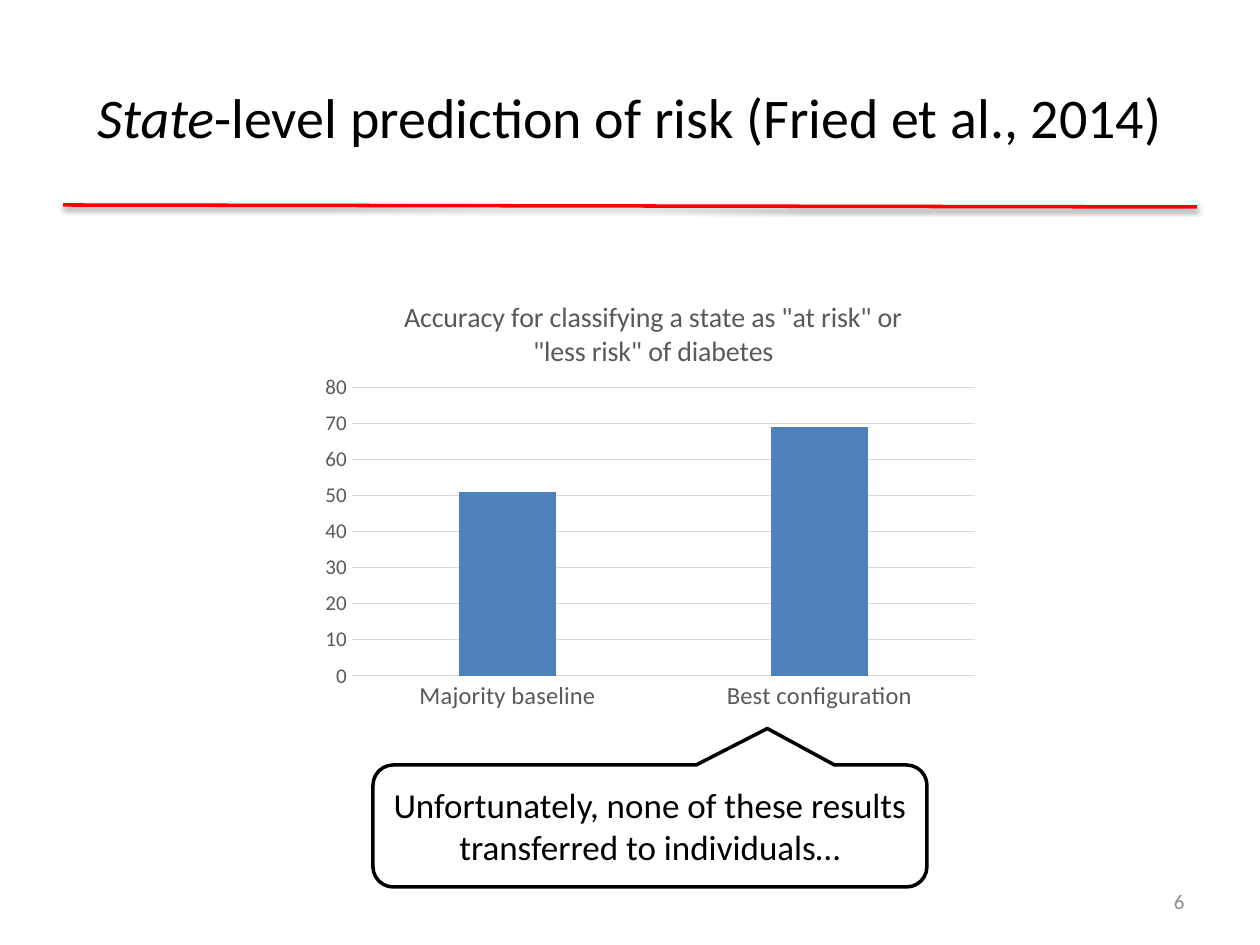
"""Build a slide comparing state-level accuracy of diabetes risk prediction."""
from dataclasses import dataclass

from lxml import etree
from pptx import Presentation
from pptx import util as u
from pptx.chart.data import CategoryChartData
from pptx.dml.color import RGBColor
from pptx.enum import chart as charts, shapes, text
from pptx.oxml import parse_xml
from pptx.oxml.ns import nsdecls, qn

TITLE = [("State", True), ("-level prediction of risk (Fried et al., 2014)", False)]
CHART_TITLE = 'Accuracy for classifying a state as "at risk" or "less risk" of diabetes'
ACCURACY = {"Majority baseline": 51, "Best configuration": 69}
REMARK = "Unfortunately, none of these results transferred to individuals…"
PAGE_NUMBER = "6"

PAGE_SIZE = (1260, 945)
RULE_ENDS = (63, 205, 1197, 207)
TITLE_BOX = (63, 38, 1134, 157)
CHART_BOX = (311, 270, 678, 451)
REMARK_BOX = (373, 765, 554, 122)
NUMBER_BOX = (903, 876, 294, 50)
TITLE_LAYOUT = {"x": 0.13, "y": 0.05}
PLOT_LAYOUT = {"x": 0.06, "y": 0.26, "w": 0.92, "h": 0.64}
CALLOUT_TIP = (0.212, -0.799, 0.167)


@dataclass(frozen=True)
class Theme:
    font: str = "Calibri"
    ink: str = "000000"
    paper: str = "FFFFFF"
    rule: str = "FF0000"
    muted: str = "595959"
    grid: str = "D9D9D9"
    bar: str = "4F81BD"
    number: str = "8C8C8C"
    title_size: int = 32
    remark_size: int = 20
    heading_size: int = 16
    category_size: int = 14
    small_size: int = 12


THEME = Theme()


def px(*lengths):
    return [round(length * u.Inches(1) / 126) for length in lengths]


def color(value):
    return RGBColor.from_string(value)


def set_font(font, size, value):
    font.name, font.size, font.bold = THEME.font, u.Pt(size), False
    font.color.rgb = color(value)


def set_line(line, value, width):
    line.color.rgb = color(value)
    line.width = u.Pt(width)


def write(shape, spans, size, value, align):
    frame = shape.text_frame
    frame.word_wrap = True
    frame.vertical_anchor = text.MSO_ANCHOR.MIDDLE
    para = frame.paragraphs[0]
    para.alignment = align
    set_font(para.font, size, value)
    for words, italic in spans:
        span = para.add_run()
        span.text = words
        if italic:
            span.font.italic = True


def add_rule(page):
    rule = page.shapes.add_connector(shapes.MSO_CONNECTOR.STRAIGHT, *px(*RULE_ENDS))
    set_line(rule.line, THEME.rule, 2)
    rule._element.spPr.append(parse_xml(
        f'<a:effectLst {nsdecls("a")}><a:outerShdw blurRad="{u.Pt(3.1)}" '
        f'dist="{u.Pt(1.6)}" dir="5400000" rotWithShape="0">'
        f'<a:srgbClr val="{THEME.ink}"><a:alpha val="38000"/></a:srgbClr>'
        '</a:outerShdw></a:effectLst>'))


def place(element, layout, inner=False):
    for old in element.findall(qn("c:layout")):
        element.remove(old)
    holder = etree.Element(qn("c:layout"))
    manual = etree.SubElement(holder, qn("c:manualLayout"))
    settings = {"layoutTarget": "inner"} if inner else {}
    settings.update(xMode="edge", yMode="edge", **layout)
    for name, value in settings.items():
        etree.SubElement(manual, qn(f"c:{name}")).set("val", str(value))
    element.insert(0 if inner else 1, holder)


def add_accuracy_chart(page):
    data = CategoryChartData()
    data.categories = list(ACCURACY)
    data.add_series("Series 1", list(ACCURACY.values()))
    chart = page.shapes.add_chart(
        charts.XL_CHART_TYPE.COLUMN_CLUSTERED, *px(*CHART_BOX), data).chart
    set_font(chart.font, 10, THEME.ink)
    chart.has_legend = False
    heading = chart.chart_title.text_frame
    heading.text = CHART_TITLE
    set_font(heading.paragraphs[0].font, THEME.heading_size, THEME.muted)
    place(chart.chart_title._element, TITLE_LAYOUT)

    plot = chart.plots[0]
    plot.gap_width, plot.overlap, plot.vary_by_categories = 219, -27, False
    bars = plot.series[0].format.fill
    bars.solid()
    bars.fore_color.rgb = color(THEME.bar)
    place(chart._chartSpace.chart.plotArea, PLOT_LAYOUT, inner=True)

    categories, values = chart.category_axis, chart.value_axis
    for axis, size in ((categories, THEME.category_size), (values, THEME.small_size)):
        set_font(axis.tick_labels.font, size, THEME.muted)
        axis.major_tick_mark = axis.minor_tick_mark = charts.XL_TICK_MARK.NONE
    set_line(categories.format.line, THEME.grid, 0.75)
    values.format.line.fill.background()
    values.minimum_scale, values.maximum_scale, values.major_unit = 0, 80, 10
    set_line(values.major_gridlines.format.line, THEME.grid, 0.75)


def add_remark(page):
    callout = page.shapes.add_shape(
        shapes.MSO_SHAPE.ROUNDED_RECTANGULAR_CALLOUT, *px(*REMARK_BOX))
    for index, value in enumerate(CALLOUT_TIP):
        callout.adjustments[index] = value
    callout.shadow.inherit = False
    callout.fill.solid()
    callout.fill.fore_color.rgb = color(THEME.paper)
    set_line(callout.line, THEME.ink, 2)
    write(callout, [(REMARK, False)], THEME.remark_size, THEME.ink, text.PP_ALIGN.CENTER)


def main():
    deck = Presentation()
    deck.slide_width, deck.slide_height = px(*PAGE_SIZE)
    page = deck.slides.add_slide(deck.slide_layouts[6])
    add_rule(page)
    title = page.shapes.add_textbox(*px(*TITLE_BOX))
    write(title, TITLE, THEME.title_size, THEME.ink, text.PP_ALIGN.CENTER)
    number = page.shapes.add_textbox(*px(*NUMBER_BOX))
    write(number, [(PAGE_NUMBER, False)], THEME.small_size, THEME.number, text.PP_ALIGN.RIGHT)
    add_accuracy_chart(page)
    add_remark(page)
    deck.save("out.pptx")


if __name__ == "__main__":
    main()
